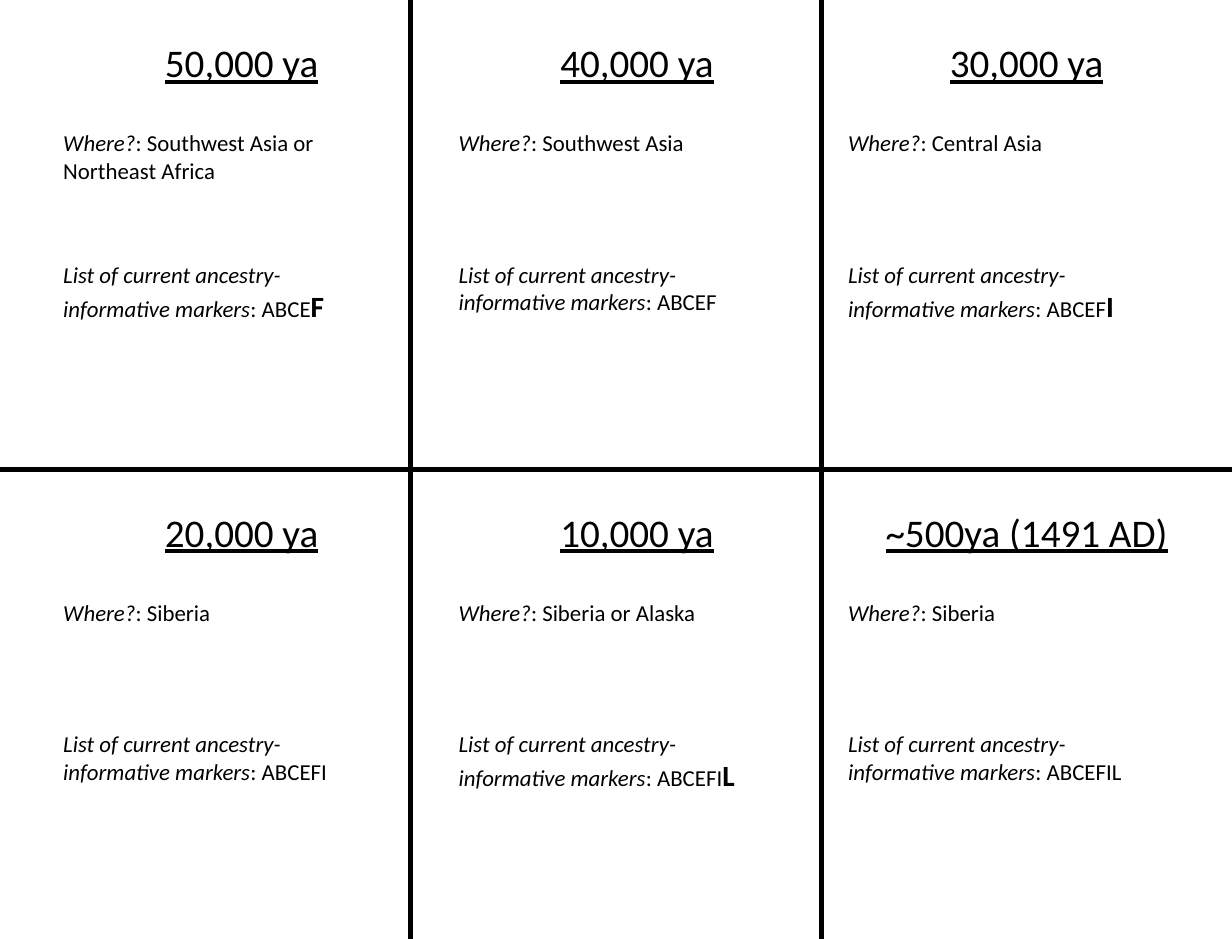
"""Build a six-panel timeline of places and ancestry-informative markers."""
from lxml.etree import SubElement
from pptx import Presentation
from pptx.dml.color import RGBColor
from pptx.enum.shapes import MSO_CONNECTOR
from pptx.enum.text import MSO_AUTO_SIZE, PP_ALIGN
from pptx.oxml.ns import qn
from pptx.util import Inches, Pt

PANELS = [
    ("50,000 ya", "Southwest Asia or Northeast Africa", "ABCE", "F"),
    ("40,000 ya", "Southwest Asia", "ABCEF", ""),
    ("30,000 ya", "Central Asia", "ABCEF", "I"),
    ("20,000 ya", "Siberia", "ABCEFI", ""),
    ("10,000 ya", "Siberia or Alaska", "ABCEFI", "L"),
    ("~500ya (1491 AD)", "Siberia", "ABCEFIL", ""),
]
PLACE_LABEL = "Where?"
MARKER_LABEL = "List of current ancestry-informative markers"

BLACK = RGBColor(0, 0, 0)
WIDTH, HEIGHT = 10.5, 8
ROW_HEIGHT = HEIGHT / 2
COLUMN_WIDTH = WIDTH / 3
PANEL_LEFTS = [0.44, 3.81, 7.13]
TITLE_TOP, PLACE_TOP, MARKER_TOP = 0.28, 1.05, 2.17
TITLE_WIDTH, BODY_WIDTH = 3.24, 2.85
TITLE_HEIGHT, LINE_HEIGHT, TWO_LINE_HEIGHT, TALL_HEIGHT = 0.5, 0.34, 0.57, 0.64

TITLE = {"size": Pt(24), "underline": True}
LABEL = {"size": Pt(14), "italic": True}
VALUE = {"size": Pt(14), "italic": False}
NEW_MARKER = {"size": Pt(18), "bold": True}


def add_divider(slide, start, end):
    line = slide.shapes.add_connector(
        MSO_CONNECTOR.STRAIGHT, *(Inches(value) for value in start + end))
    line.line.color.rgb = BLACK
    line.line.width = Pt(3)
    SubElement(line._element.spPr, qn("a:effectLst"))


def add_text(slide, left, top, width, height, runs, alignment=PP_ALIGN.LEFT):
    box = slide.shapes.add_textbox(
        *(Inches(value) for value in (left, top, width, height)))
    frame = box.text_frame
    frame.word_wrap = True
    frame.auto_size = MSO_AUTO_SIZE.SHAPE_TO_FIT_TEXT
    paragraph = frame.paragraphs[0]
    paragraph.alignment = alignment
    for text, style in runs:
        run = paragraph.add_run()
        run.text = text
        run.font.name = "Calibri"
        run.font.color.rgb = BLACK
        for name, value in style.items():
            setattr(run.font, name, value)


def add_panel(slide, index, title, place, markers, new_marker):
    row, column = divmod(index, len(PANEL_LEFTS))
    left, top = PANEL_LEFTS[column], row * ROW_HEIGHT
    add_text(slide, left, top + TITLE_TOP, TITLE_WIDTH, TITLE_HEIGHT,
             [(title, TITLE)], PP_ALIGN.CENTER)

    place_height = TWO_LINE_HEIGHT if len(place) > 20 else LINE_HEIGHT
    add_text(slide, left, top + PLACE_TOP, BODY_WIDTH, place_height,
             [(PLACE_LABEL, LABEL), (f": {place}", VALUE)])

    marker_runs = [(MARKER_LABEL, LABEL), (f": {markers}", VALUE)]
    if new_marker:
        marker_runs.append((new_marker, NEW_MARKER))
    marker_height = TALL_HEIGHT if new_marker else TWO_LINE_HEIGHT
    add_text(slide, left, top + MARKER_TOP, BODY_WIDTH, marker_height, marker_runs)


def main():
    presentation = Presentation()
    presentation.slide_width = Inches(WIDTH)
    presentation.slide_height = Inches(HEIGHT)
    slide = presentation.slides.add_slide(presentation.slide_layouts[6])

    add_divider(slide, (0, ROW_HEIGHT), (WIDTH, ROW_HEIGHT))
    for column in (1, 2):
        x = column * COLUMN_WIDTH
        add_divider(slide, (x, 0), (x, HEIGHT))
    for index, panel in enumerate(PANELS):
        add_panel(slide, index, *panel)

    presentation.save("out.pptx")


if __name__ == "__main__":
    main()
